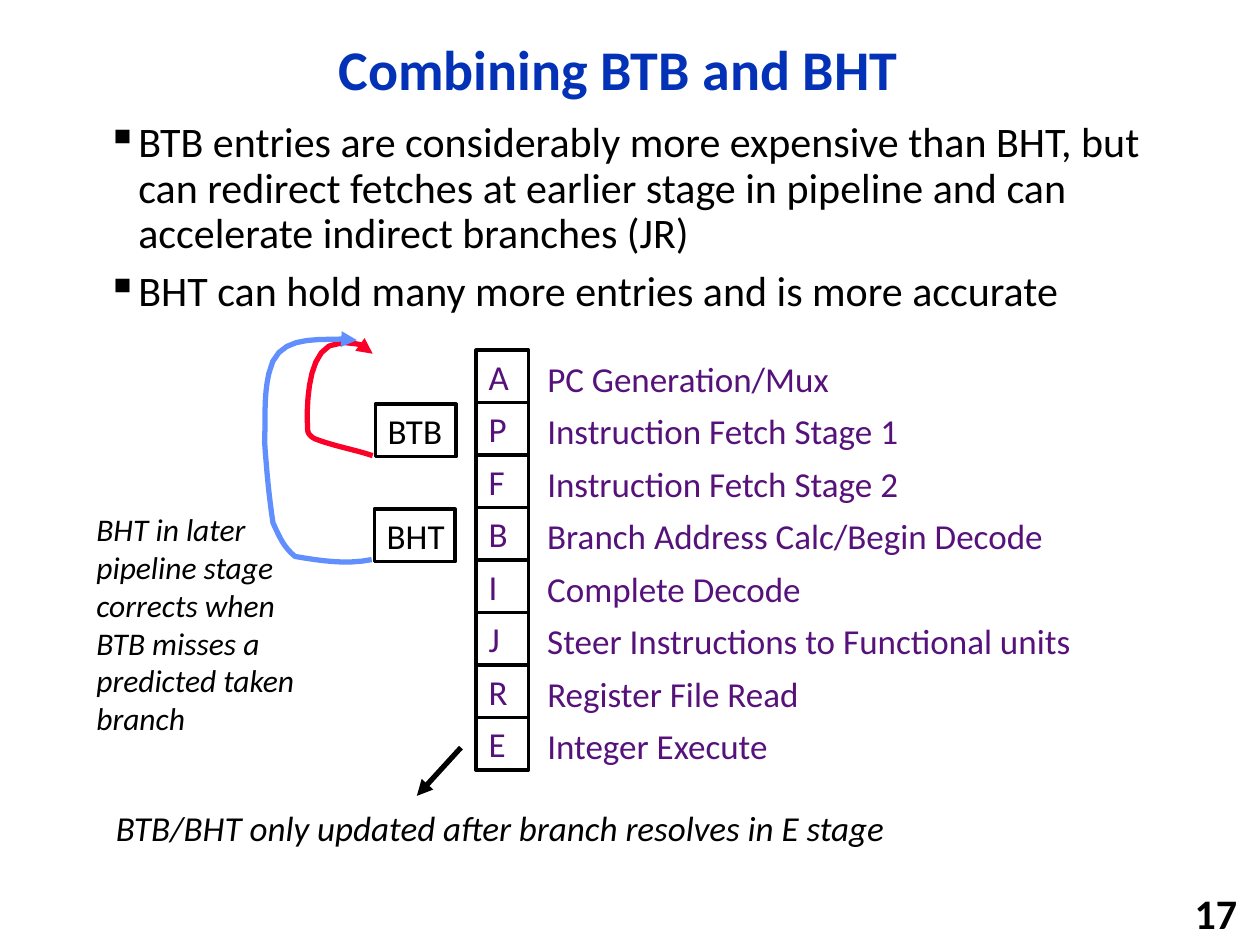
import dataclasses

import pptx
import pptx.dml.color
import pptx.enum.shapes
import pptx.enum.text
import pptx.oxml
import pptx.oxml.ns
import pptx.util

ANCHOR = pptx.enum.text.MSO_ANCHOR
ALIGN = pptx.enum.text.PP_ALIGN


@dataclasses.dataclass(frozen=True)
class Theme:
    font: str = "Calibri"
    title_color: str = "0332B7"
    ink: str = "000000"
    stage_color: str = "56127A"
    paper: str = "FFFFFF"
    btb_color: str = "FC0128"
    bht_color: str = "618FFD"
    title_size: int = 32
    body_size: int = 24
    label_size: int = 20
    note_size: int = 18
    box_line: int = 2
    arrow_line: int = 3


class SlideBuilder:
    """Draws styled elements on a slide measured in a grid of 120 columns by 90 rows."""

    def __init__(self, presentation, theme):
        self.theme = theme
        self.cell = presentation.slide_width / 120
        self.slide = presentation.slides.add_slide(presentation.slide_layouts[6])

    def grid(self, *cells):
        return [round(value * self.cell) for value in cells]

    def rgb(self, color):
        return pptx.dml.color.RGBColor.from_string(color)

    def fill_text(self, shape, lines, size, color, bold=False, italic=False,
                  align=ALIGN.LEFT, anchor=ANCHOR.TOP, wrap=True, spacing=1.0):
        frame = shape.text_frame
        frame.text = "\n".join(lines)
        frame.word_wrap = wrap
        frame.vertical_anchor = anchor
        for paragraph in frame.paragraphs:
            paragraph.alignment = align
            paragraph.line_spacing = spacing
            for run in paragraph.runs:
                run.font.name = self.theme.font
                run.font.size = pptx.util.Pt(size)
                run.font.bold = bold
                run.font.italic = italic
                run.font.color.rgb = self.rgb(color)
        return frame

    def text(self, place, line, size, color, **style):
        shape = self.slide.shapes.add_textbox(*self.grid(*place))
        return self.fill_text(shape, [line], size, color, **style)

    def bullets(self, place, lines):
        shape = self.slide.shapes.add_textbox(*self.grid(*place))
        frame = self.fill_text(shape, lines, self.theme.body_size, self.theme.ink, spacing=0.9)
        indent = pptx.util.Inches(0.25)
        for index, paragraph in enumerate(frame.paragraphs):
            properties = paragraph._p.get_or_add_pPr()
            properties.set("marL", str(indent))
            properties.set("indent", str(-indent))
            if index:
                paragraph.space_before = pptx.util.Pt(0.3 * self.theme.body_size)
            bullet = pptx.oxml.ns.qn("a:buChar")
            properties.append(properties.makeelement(bullet, {"char": "▪"}))

    def label(self, place, line, color, inset=0.1, italic=False):
        frame = self.text(place, line, self.theme.label_size, color, italic=italic, wrap=False)
        frame.margin_left = pptx.util.Inches(inset)
        frame.auto_size = pptx.enum.text.MSO_AUTO_SIZE.SHAPE_TO_FIT_TEXT

    def box(self, place, line, color):
        rectangle = pptx.enum.shapes.MSO_SHAPE.RECTANGLE
        shape = self.slide.shapes.add_shape(rectangle, *self.grid(*place))
        shape.shadow.inherit = False
        shape.fill.solid()
        shape.fill.fore_color.rgb = self.rgb(self.theme.paper)
        shape.line.color.rgb = self.rgb(self.theme.ink)
        shape.line.width = pptx.util.Pt(self.theme.box_line)
        self.fill_text(shape, [line], self.theme.label_size, color,
                       anchor=ANCHOR.MIDDLE, wrap=False)

    def style_arrow(self, shape, color):
        shape.line.color.rgb = self.rgb(color)
        shape.line.width = pptx.util.Pt(self.theme.arrow_line)
        line = shape.line._get_or_add_ln()
        line.append(line.makeelement(pptx.oxml.ns.qn("a:tailEnd"), {"type": "triangle"}))

    def arrow(self, start, end, color):
        straight = pptx.enum.shapes.MSO_CONNECTOR.STRAIGHT
        connector = self.slide.shapes.add_connector(straight, *self.grid(*start, *end))
        self.style_arrow(connector, color)
        properties = connector._element.spPr
        properties.append(properties.makeelement(pptx.oxml.ns.qn("a:effectLst"), {}))

    def curved_arrow(self, start, curves, color, steps=8):
        points = []
        origin = start
        for first, second, end in curves:
            for step in range(1, steps + 1):
                t = step / steps
                weights = ((1 - t) ** 3, 3 * t * (1 - t) ** 2, 3 * t * t * (1 - t), t ** 3)
                points.append(self.grid(*(
                    sum(weight * value for weight, value in zip(weights, axis))
                    for axis in zip(origin, first, second, end))))
            origin = end
        builder = self.slide.shapes.build_freeform(*self.grid(*start))
        builder.add_line_segments(points, close=False)
        shape = builder.convert_to_shape()
        shape.shadow.inherit = False
        shape.fill.background()
        self.style_arrow(shape, color)


STAGES = [
    ("A", "PC Generation/Mux", 30.4),
    ("P", "Instruction Fetch Stage 1", 37.1),
    ("F", "Instruction Fetch Stage 2", 37.1),
    ("B", "Branch Address Calc/Begin Decode", 50.9),
    ("I", "Complete Decode", 27.6),
    ("J", "Steer Instructions to Functional units", 53.5),
    ("R", "Register File Read", 27.5),
    ("E", "Integer Execute", 24.6),
]
BTB_LOOP = [
    ((33.7, 42.8), (31.8, 42.5), (30, 41.8)),
    ((29.6, 41.6), (29.3, 41.3), (29.3, 40.9)),
    ((29.2, 39.1), (29.2, 34.2), (31.3, 33)),
    ((31.7, 32.8), (32.3, 32.8), (32.6, 32.6)),
    ((33.7, 32.8), (34.9, 32.6), (35.5, 33.7)),
]
BHT_LOOP = [
    ((32.9, 53.8), (30.5, 53.4), (28.1, 53)),
    ((27, 52.1), (26.6, 51.1), (26, 49.8)),
    ((25.6, 47.2), (25.4, 44.8), (25.2, 42.1)),
    ((25.3, 40), (25.1, 37.8), (25.6, 35.6)),
    ((26.3, 32), (29.6, 32.4), (32.4, 32.3)),
    ((33, 32.3), (34, 32.4), (34, 32.4)),
]


def main():
    presentation = pptx.Presentation()
    presentation.slide_width = pptx.util.Inches(10)
    presentation.slide_height = pptx.util.Inches(7.5)
    theme = Theme()
    builder = SlideBuilder(presentation, theme)

    builder.text((11, 2, 95.8, 9.75), "Combining BTB and BHT", theme.title_size,
                 theme.title_color, bold=True, align=ALIGN.CENTER,
                 anchor=ANCHOR.MIDDLE, spacing=0.9)
    builder.bullets((9, 11, 100.8, 21), [
        "BTB entries are considerably more expensive than BHT, but can redirect fetches "
        "at earlier stage in pipeline and can accelerate indirect branches (JR)",
        "BHT can hold many more entries and is more accurate",
    ])
    builder.text((94, 85, 25, 3.8), "17", theme.body_size, theme.ink, bold=True,
                 align=ALIGN.RIGHT, anchor=ANCHOR.MIDDLE)

    for index, (letter, meaning, width) in enumerate(STAGES):
        row = 33.35 + 5 * index
        builder.box((45.35, row, 5, 5), letter, theme.stage_color)
        builder.label((50.2, row + 0.1, width, 5.25), meaning, theme.stage_color, inset=0.16)

    builder.curved_arrow((35.5, 43.4), BTB_LOOP, theme.btb_color)
    builder.box((35.75, 38.5, 7.7, 5), "BTB", theme.ink)
    builder.box((35.65, 48.5, 7.7, 5), "BHT", theme.ink)
    builder.curved_arrow((35.4, 53.3), BHT_LOOP, theme.bht_color)
    builder.text((8, 48, 24.1, 22.75),
                 "BHT in later pipeline stage corrects when BTB misses a predicted taken branch",
                 theme.note_size, theme.ink, italic=True)
    builder.label((9.85, 76.25, 77.3, 5.25),
                  "BTB/BHT only updated after branch resolves in E stage", theme.ink, italic=True)
    builder.arrow((43.9, 71.2), (39.7, 75.8), theme.ink)
    presentation.save("out.pptx")


if __name__ == "__main__":
    main()
